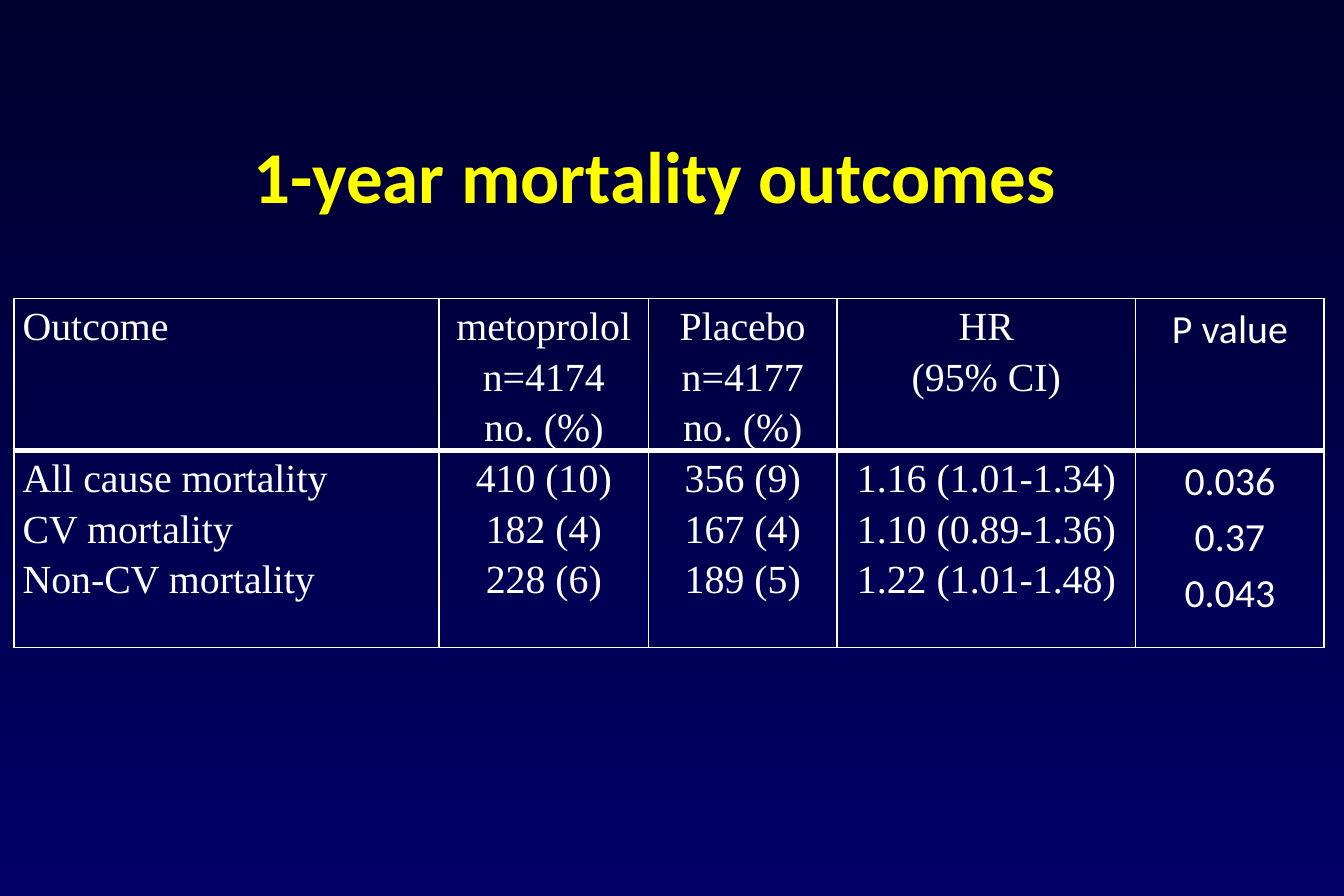
import pptx
import pptx.dml.color
import pptx.enum.text
import pptx.oxml
import pptx.oxml.ns
import pptx.util

Cm = pptx.util.Cm
Pt = pptx.util.Pt
RGBColor = pptx.dml.color.RGBColor
ALIGN = pptx.enum.text.PP_ALIGN
ANCHOR = pptx.enum.text.MSO_ANCHOR

TITLE = "1-year mortality outcomes"
# One tuple per column: heading lines, value lines, width in cm, font, alignment
COLUMNS = [
    (["Outcome"],
     ["All cause mortality", "CV mortality", "Non-CV mortality"],
     9.04, "Times New Roman", ALIGN.LEFT),
    (["metoprolol", "n=4174", "no. (%)"],
     ["410 (10)", "182 (4)", "228 (6)"],
     4.45, "Times New Roman", ALIGN.CENTER),
    (["Placebo", "n=4177", "no. (%)"],
     ["356 (9)", "167 (4)", "189 (5)"],
     4.01, "Times New Roman", ALIGN.CENTER),
    (["HR", "(95% CI)"],
     ["1.16 (1.01-1.34)", "1.10 (0.89-1.36)", "1.22 (1.01-1.48)"],
     6.35, "Times New Roman", ALIGN.CENTER),
    (["P value"],
     ["0.036", "0.37", "0.043"],
     4.01, "Calibri", ALIGN.CENTER),
]
ROW_HEIGHTS = [3.23, 4.19]
# Border widths in points for each row: left, right, top, bottom
BORDERS = [(1, 1, 1, 3), (1, 1, 3, 1)]

WHITE = RGBColor(0xFF, 0xFF, 0xFF)
YELLOW = RGBColor(0xFF, 0xFF, 0x00)
NIGHT = RGBColor(0x00, 0x00, 0x2F)
NAVY = RGBColor(0x00, 0x00, 0x66)


def add_span(para, text, font, size, colour, bold=False):
    span = para.add_run()
    span.text = text
    span.font.name = font
    span.font.size = Pt(size)
    span.font.color.rgb = colour
    span.font.bold = bold


def add_borders(cell, widths):
    properties = cell._tc.get_or_add_tcPr()
    for side, width in zip("LRTB", widths):
        properties.append(pptx.oxml.parse_xml(
            f'<a:ln{side} {pptx.oxml.ns.nsdecls("a")} w="{Pt(width)}">'
            f'<a:solidFill><a:srgbClr val="{WHITE}"/></a:solidFill></a:ln{side}>'))


def fill_cell(cell, lines, font, align):
    cell.margin_left = cell.margin_right = Cm(0.18)
    cell.margin_top = cell.margin_bottom = 0
    cell.vertical_anchor = ANCHOR.TOP
    cell.fill.background()
    for number, line in enumerate(lines):
        frame = cell.text_frame
        para = frame.add_paragraph() if number else frame.paragraphs[0]
        para.alignment = align
        para.line_spacing = 1.15
        add_span(para, line, font, 24, WHITE)


def main():
    deck = pptx.Presentation()
    deck.slide_width, deck.slide_height = Cm(28.58), Cm(19.05)
    page = deck.slides.add_slide(deck.slide_layouts[5])

    backdrop = page.background.fill
    backdrop.gradient()
    backdrop.gradient_angle = 270
    for stop, colour in zip(backdrop.gradient_stops, (NIGHT, NAVY)):
        stop.color.rgb = colour

    title = page.shapes.title
    title.left, title.top = Cm(1.8), Cm(2.34)
    title.width, title.height = Cm(24.28), Cm(2.74)
    title.text_frame.vertical_anchor = ANCHOR.MIDDLE
    heading = title.text_frame.paragraphs[0]
    heading.alignment = ALIGN.CENTER
    add_span(heading, TITLE, "Calibri", 44, YELLOW, bold=True)

    total_width = sum(column[2] for column in COLUMNS)
    table = page.shapes.add_table(
        len(ROW_HEIGHTS), len(COLUMNS), Cm(0.3), Cm(6.35),
        Cm(total_width), Cm(sum(ROW_HEIGHTS))).table
    table.first_row = table.horz_banding = False
    for row, height in zip(table.rows, ROW_HEIGHTS):
        row.height = Cm(height)
    for c, (head, values, width, font, align) in enumerate(COLUMNS):
        table.columns[c].width = Cm(width)
        for r, lines in enumerate((head, values)):
            add_borders(table.cell(r, c), BORDERS[r])
            fill_cell(table.cell(r, c), lines, font, align)

    deck.save("out.pptx")


if __name__ == "__main__":
    main()
